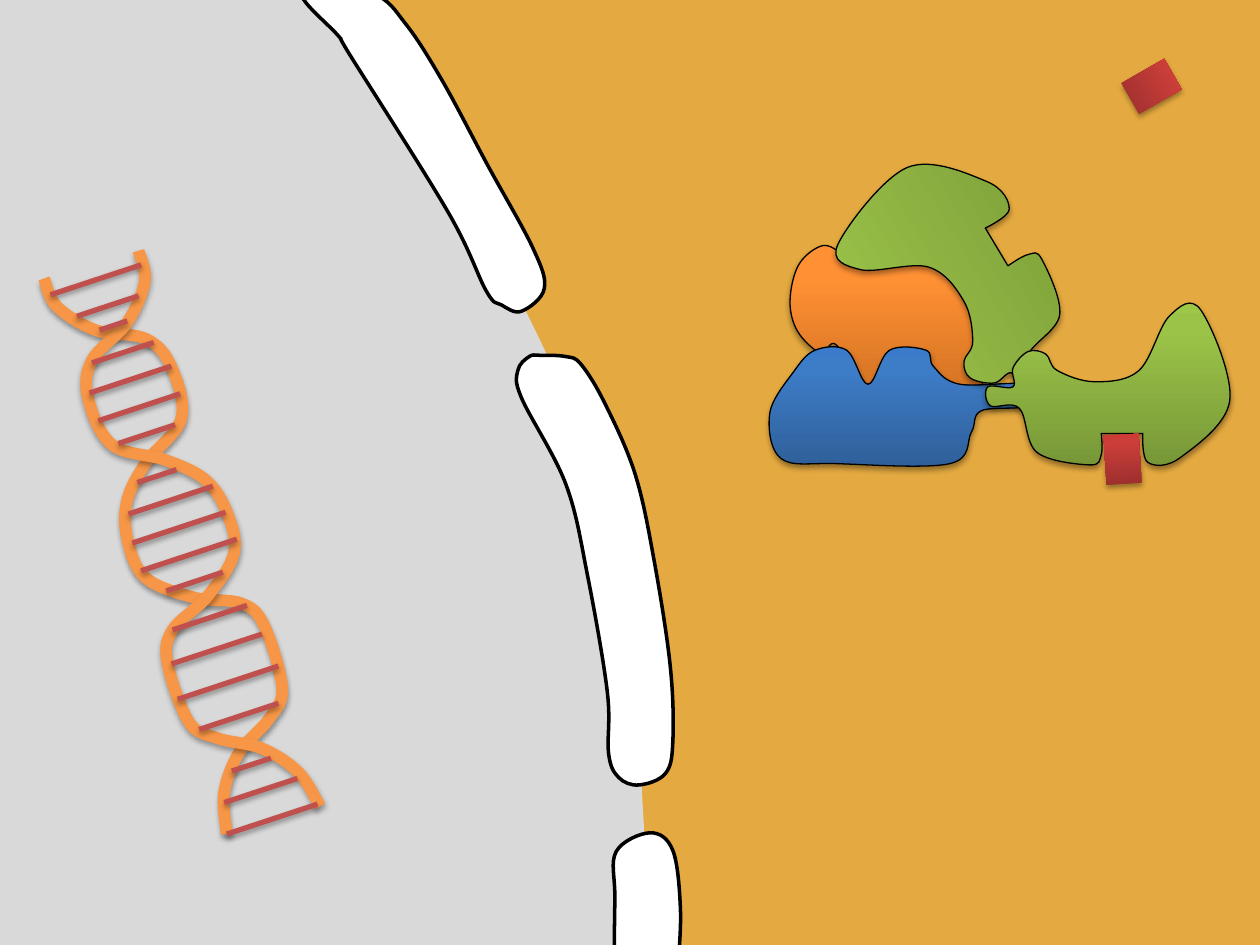
"""Draw a cell scene: smooth outlines run through named joints, rungs share one tilt."""
from math import cos, radians, sin

from pptx import Presentation
from pptx.dml.color import RGBColor
from pptx.enum.shapes import MSO_CONNECTOR, MSO_SHAPE
from pptx.oxml import parse_xml
from pptx.oxml.ns import nsdecls
from pptx.util import Inches, Pt

STRAIGHT = MSO_CONNECTOR.STRAIGHT
RECT = MSO_SHAPE.RECTANGLE
NS = nsdecls("a")
COLORS = {
    "cell": "E4A940", "core": "D9D9D9", "wall": "FFFFFF", "ink": "000000",
    "strand": "F79646", "rung": "C0504D",
}
BLENDS = {
    "orange": {0: "CC6E20", 80: "FF9034", 100: "FF9136"},
    "blue": {0: "2F5F99", 80: "3D7CC7", 100: "3A7CCB"},
    "green": {0: "779737", 80: "9BC348", 100: "9DC746"},
    "red": {0: "9C2F2D", 80: "CB3E3A", 100: "CE3B37"},
}
SHADOW = (
    f'<a:effectLst {NS}><a:outerShdw blurRad="{Pt(3.1)}" dist="{Pt(1.8)}" dir="5400000" '
    'rotWithShape="0"><a:srgbClr val="000000"><a:alpha val="35000"/></a:srgbClr>'
    '</a:outerShdw></a:effectLst>')

CELL = [
    (4.64, 8.05), (4.5, 5.48), (2.88, .95), (1.93, -.28), (2.88, -.29), (6.88, -.21),
    (10.19, -.12), (10.29, .1), (10.22, 7.95), (10.36, 7.72), (5.34, 7.76), (5.07, 8.07),
    (4.83, 8.31), (4.62, 8.17)]
CELL_EDGE = [(2.88, -.29)]
CORE = [
    (2.42, -.36), (3.23, .69), (3.66, 1.48), (4.37, 2.88), (4.8, 4.01), (4.95, 4.79),
    (5.1, 5.84), (5.09, 6.15), (5.13, 6.94), (5.13, 7.55), (4.83, 7.82), (.83, 7.84),
    (-.25, 7.72), (-.5, 6.97), (-.58, 3.04), (-.4, .46), (-.13, -.24), (.78, -.28),
    (1.7, -.34)]
CORE_EDGE = [(.78, -.28)]
WALL_TOP = [
    (2.78, .44), (3.56, 1.69), (3.86, 2.31), (3.98, 2.42), (4.14, 2.47), (4.32, 2.29),
    (4.23, 1.97), (3.87, 1.31), (3.51, .64), (3.22, .19), (2.96, -.05), (2.39, -.15),
    (2.42, .01), (2.69, .29)]
WALL_MID = [
    (4.14, 3.16), (4.49, 3.84), (4.66, 4.55), (4.82, 5.49), (4.83, 5.98), (4.91, 6.17),
    (5.07, 6.23), (5.28, 6.14), (5.34, 5.89), (5.32, 5.29), (5.19, 4.44), (5.04, 3.76),
    (4.8, 3.2), (4.61, 2.89), (4.49, 2.83), (4.29, 2.82), (4.2, 2.83), (4.11, 2.94)]
WALL_LOW = [
    (4.88, 7.82), (4.88, 7.13), (4.89, 6.76), (5.16, 6.61), (5.34, 6.75), (5.4, 7.21),
    (5.38, 7.67), (5.35, 7.87), (5.11, 7.93), (4.94, 7.93)]
BODY = [
    (6.64, 2.74), (6.85, 3.15), (6.92, 3.21), (7.11, 2.8), (7.33, 2.9), (7.53, 3.14),
    (7.77, 3.14), (7.8, 2.94), (7.84, 2.64), (7.67, 2.26), (7.44, 2.04), (7.01, 2.05),
    (6.81, 2.05), (6.7, 2.02), (6.53, 1.95), (6.34, 2.1), (6.27, 2.39), (6.33, 2.63),
    (6.51, 2.8)]
BASE = [
    (8.19, 3.05), (7.62, 3.05), (7.41, 2.91), (7.35, 2.78), (7.06, 2.78), (6.89, 3.05),
    (6.72, 2.78), (6.47, 2.78), (6.3, 2.95), (6.11, 3.28), (6.2, 3.64), (6.64, 3.68),
    (7.54, 3.68), (7.71, 3.43), (7.79, 3.26), (8.17, 3.22)]
HOOD = [
    (8.14, 3.14), (8.03, 2.96), (7.89, 3.04), (7.7, 3), (7.65, 2.87), (7.72, 2.71),
    (7.65, 2.39), (7.37, 2.12), (6.83, 2.14), (6.65, 1.94), (7.2, 1.33), (7.83, 1.44),
    (8.01, 1.66), (7.82, 1.81), (8, 2.11), (8.16, 2.02), (8.27, 2.06), (8.41, 2.5),
    (8.16, 2.82), (8.27, 3.04)]
HOOD_SLOT = [(7.82, 1.81), (8, 2.11)]
ARM = [
    (7.84, 3.07), (8.04, 3.07), (8.04, 2.92), (8.16, 2.79), (8.3, 2.81), (8.39, 2.94),
    (8.69, 3.03), (9.04, 2.94), (9.28, 2.51), (9.53, 2.46), (9.76, 3.18), (9.37, 3.63),
    (9.11, 3.67), (9.07, 3.44), (8.74, 3.44), (8.74, 3.61), (8.65, 3.69), (8.23, 3.59),
    (8.09, 3.24), (7.86, 3.22)]
ARM_SLOT = [(9.07, 3.44), (8.74, 3.44)]
STRAND_A = [
    (.35, 2.21), (.45, 2.43), (.76, 2.62), (1.16, 2.69), (1.36, 2.91), (1.44, 3.32),
    (1.16, 3.67), (1.01, 3.97), (1.01, 4.27), (1.15, 4.58), (1.53, 4.74), (1.92, 4.79),
    (2.1, 4.97), (2.24, 5.46), (2.14, 5.7), (1.9, 5.97), (1.78, 6.29), (1.8, 6.62)]
STRAND_B = [
    (1.1, 1.99), (1.15, 2.23), (1.01, 2.56), (.73, 2.86), (.7, 3.16), (.89, 3.53),
    (1.31, 3.65), (1.62, 3.8), (1.79, 4.04), (1.86, 4.38), (1.65, 4.73), (1.37, 5),
    (1.33, 5.26), (1.5, 5.73), (1.73, 5.86), (2.08, 5.94), (2.37, 6.13), (2.54, 6.4)]
HELIX_TURN = 341.8
RUNG_TILT = .33
RUNG_SPANS = [
    (.4, 2.34, .72), (.61, 2.51, .49), (.79, 2.62, .22),
    (.73, 2.88, .49), (.71, 3.12, .65), (.78, 3.34, .65), (.94, 3.52, .45),
    (1.09, 3.83, .31), (1.02, 4.08, .67), (1.05, 4.31, .74), (1.12, 4.53, .76),
    (1.32, 4.69, .45),
    (1.37, 5, .59), (1.36, 5.27, .72), (1.41, 5.55, .8), (1.58, 5.79, .63),
    (1.84, 6.12, .31), (1.78, 6.37, .58), (1.8, 6.62, .72)]


def spline(joints, edges, closed):
    """Give cubic segments whose handles are a sixth of the step between neighbours."""
    spots = [complex(*joint) for joint in joints]
    ring = spots[-1:] + spots + spots[:2] if closed else spots[:1] + spots + spots[-1:]
    sharp = {complex(*edge) for edge in edges}
    pulls = [0 if here in sharp else (after - before) / 6
             for before, here, after in zip(ring, ring[1:], ring[2:])]
    knots = ring[1:-1]
    return [(a + pull, b - push, b)
            for a, b, pull, push in zip(knots, knots[1:], pulls, pulls[1:])]


def node(tag, spots=()):
    """Build one drawing step from points in inches."""
    marks = "".join(f'<a:pt x="{Inches(p.real)}" y="{Inches(p.imag)}"/>' for p in spots)
    return parse_xml(f"<a:{tag} {NS}>{marks}</a:{tag}>")


class Scene:
    """Hold the slide and its style."""

    def __init__(self, slide):
        self.slide = slide
        self.shapes = slide.shapes

    def ink(self, shape, color, width):
        shape.line.color.rgb = RGBColor.from_string(COLORS[color])
        shape.line.width = Pt(width)

    def shade(self, shape):
        shape.element.spPr.append(parse_xml(SHADOW))

    def blend(self, shape, name):
        shape.fill.gradient()
        shape.fill.gradient_angle = 90
        stops = shape.element.xpath(".//a:gsLst")[0]
        stops[:] = [
            parse_xml(f'<a:gs {NS} pos="{pos * 1000}"><a:srgbClr val="{hue}"/></a:gs>')
            for pos, hue in BLENDS[name].items()]

    def curve(self, joints, turn=0, edges=(), closed=True):
        spin = complex(cos(radians(turn)), sin(radians(turn)))
        start = complex(*joints[0]) / spin
        parts = [[p / spin for p in part] for part in spline(joints, edges, closed)]
        hull = [start] + [p for part in parts for p in part]
        xs, ys = [p.real for p in hull], [p.imag for p in hull]
        low, high = complex(min(xs), min(ys)), complex(max(xs), max(ys))
        corner = (low + high) / 2 * spin - (high - low) / 2
        end = corner + high - low
        pen = self.shapes.build_freeform(Inches(corner.real), Inches(corner.imag))
        pen.add_line_segments([(Inches(end.real), Inches(end.imag))], close=False)
        shape = pen.convert_to_shape()
        shape.rotation = turn
        steps = [node("moveTo", [start - low])]
        steps += [node("cubicBezTo", [p - low for p in part]) for part in parts]
        if closed:
            steps.append(node("close"))
        shape.element.xpath(".//a:path")[0][:] = steps
        shape.shadow.inherit = False
        return shape

    def area(self, color, joints, edges=()):
        shape = self.curve(joints, edges=edges)
        shape.fill.solid()
        shape.fill.fore_color.rgb = RGBColor.from_string(COLORS[color])
        shape.line.fill.background()
        return shape

    def wall(self, joints, turn=0):
        shape = self.curve(joints, turn)
        shape.fill.solid()
        shape.fill.fore_color.rgb = RGBColor.from_string(COLORS["wall"])
        self.ink(shape, "ink", 2)

    def lobe(self, name, joints, turn=0, edges=()):
        shape = self.curve(joints, turn, edges)
        self.blend(shape, name)
        self.ink(shape, "ink", .75)
        self.cast(shape)

    def cast(self, shape):
        for plain in shape.element.xpath("./p:spPr/a:effectLst"):
            shape.element.spPr.remove(plain)
        self.shade(shape)

    def strand(self, joints):
        shape = self.curve(joints, HELIX_TURN, closed=False)
        shape.fill.background()
        self.ink(shape, "strand", 6.75)
        self.cast(shape)

    def rung(self, left, base, span):
        ends = left, base, left + span, base - span * RUNG_TILT
        line = self.shapes.add_connector(STRAIGHT, *map(Inches, ends))
        self.ink(line, "rung", 3)
        self.shade(line)

    def helix(self):
        self.shapes = self.slide.shapes.add_group_shape().shapes
        for joints in (STRAND_A, STRAND_B):
            self.strand(joints)
        for span in RUNG_SPANS:
            self.rung(*span)
        self.shapes = self.slide.shapes

    def block(self, left, top, turn):
        shape = self.shapes.add_shape(RECT, Inches(left), Inches(top), Inches(.28), Inches(.39))
        shape.rotation = turn
        self.blend(shape, "red")
        shape.line.fill.background()
        self.shade(shape)


def main():
    """Lay the scene from back to front."""
    deck = Presentation()
    deck.slide_width, deck.slide_height = Inches(10), Inches(7.5)
    scene = Scene(deck.slides.add_slide(deck.slide_layouts[6]))
    scene.area("cell", CELL, CELL_EDGE)
    scene.area("core", CORE, CORE_EDGE)
    scene.wall(WALL_TOP, 10.9)
    scene.wall(WALL_MID, 7.6)
    scene.wall(WALL_LOW)
    scene.lobe("orange", BODY)
    scene.lobe("blue", BASE)
    scene.lobe("green", HOOD, 239.2, HOOD_SLOT)
    scene.helix()
    scene.block(9, .49, 60.2)
    scene.lobe("green", ARM, edges=ARM_SLOT)
    scene.block(8.77, 3.45, 356.5)
    deck.save("out.pptx")


if __name__ == "__main__":
    main()
